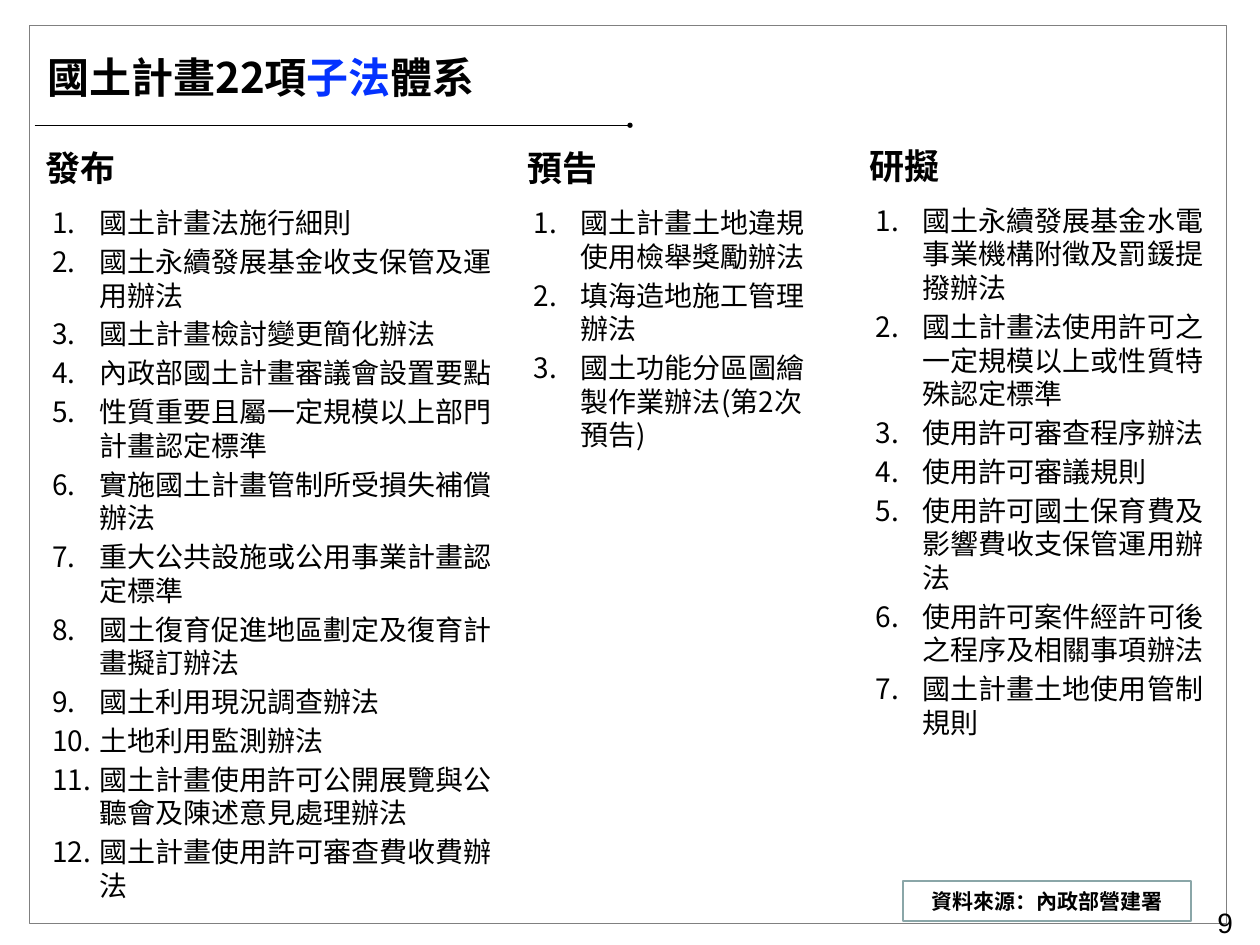
import pptx
import pptx.util
import pptx.dml.color
import pptx.enum.shapes
import pptx.enum.text
import pptx.oxml.ns
from lxml import etree

Cm = pptx.util.Cm
Pt = pptx.util.Pt
ALIGN = pptx.enum.text.PP_ALIGN
ANCHOR = pptx.enum.text.MSO_ANCHOR
CJK_FONT = "Noto Sans CJK SC"
BLACK, BLUE, GRAY, TEAL = "000000", "0432FF", "808080", "8AA6A8"

# Heading, box of the column (left, top, width, height), listed regulations
COLUMNS = [
    ("發布", (1.6, 5.79, 18.8, 31.11), [
        "國土計畫法施行細則",
        "國土永續發展基金收支保管及運用辦法",
        "國土計畫檢討變更簡化辦法",
        "內政部國土計畫審議會設置要點",
        "性質重要且屬一定規模以上部門計畫認定標準",
        "實施國土計畫管制所受損失補償辦法",
        "重大公共設施或公用事業計畫認定標準",
        "國土復育促進地區劃定及復育計畫擬訂辦法",
        "國土利用現況調查辦法",
        "土地利用監測辦法",
        "國土計畫使用許可公開展覽與公聽會及陳述意見處理辦法",
        "國土計畫使用許可審查費收費辦法",
    ]),
    ("預告", (21.01, 5.79, 12.8, 14.33), [
        "國土計畫土地違規使用檢舉獎勵辦法",
        "填海造地施工管理辦法",
        "國土功能分區圖繪製作業辦法(第2次預告)",
    ]),
    ("研擬", (34.8, 5.7, 15.04, 24.52), [
        "國土永續發展基金水電事業機構附徵及罰鍰提撥辦法",
        "國土計畫法使用許可之一定規模以上或性質特殊認定標準",
        "使用許可審查程序辦法",
        "使用許可審議規則",
        "使用許可國土保育費及影響費收支保管運用辦法",
        "使用許可案件經許可後之程序及相關事項辦法",
        "國土計畫土地使用管制規則",
    ]),
]


def color(hex_string):
    return pptx.dml.color.RGBColor.from_string(hex_string)


def place(shape, box):
    shape.left, shape.top, shape.width, shape.height = map(Cm, box)


def set_frame(shape, side=0.51, top=0.25, anchor=ANCHOR.TOP):
    frame = shape.text_frame
    frame.word_wrap = True
    frame.auto_size = pptx.enum.text.MSO_AUTO_SIZE.NONE
    frame.vertical_anchor = anchor
    frame.margin_left = frame.margin_right = Cm(side)
    frame.margin_top = frame.margin_bottom = Cm(top)
    return frame


def format_paragraph(para, size, bold=False, font=CJK_FONT, align=ALIGN.LEFT):
    para.alignment = align
    para.space_before = Pt(0)
    para.line_spacing = Pt(size * 1.2)
    para.font.size = Pt(size)
    para.font.bold = bold
    para.font.name = font
    para.font.color.rgb = color(BLACK)
    # East Asian typeface, on the runs that hold the characters
    for span in para.runs:
        properties = span.font._element
        east_asian = etree.SubElement(properties, pptx.oxml.ns.qn("a:ea"))
        east_asian.set("typeface", CJK_FONT)
        span.font.name = font


def number_paragraph(para, indent):
    properties = para._p.get_or_add_pPr()
    properties.set("marL", str(Cm(indent)))
    properties.set("indent", str(-Cm(indent)))
    bullet = etree.SubElement(properties, pptx.oxml.ns.qn("a:buAutoNum"))
    bullet.set("type", "arabicPeriod")
    # Bullets come before the default run properties
    defaults = properties.find(pptx.oxml.ns.qn("a:defRPr"))
    if defaults is not None:
        defaults.addprevious(bullet)


def add_outline(slide, box, line_color, line_width):
    shape = slide.shapes.add_shape(pptx.enum.shapes.MSO_SHAPE.RECTANGLE, *map(Cm, box))
    shape.shadow.inherit = False
    shape.fill.background()
    shape.line.color.rgb = color(line_color)
    shape.line.width = Pt(line_width)
    return shape


def add_title(slide, box):
    left, top, width, height = box
    title = slide.shapes.title
    place(title, box)
    para = set_frame(title).paragraphs[0]
    for text, hex_string in (("國土計畫22項", BLACK), ("子法", BLUE), ("體系", BLACK)):
        span = para.add_run()
        span.text = text
        span.font.color.rgb = color(hex_string)
    format_paragraph(para, 48, bold=True)

    # Rule under the title, ending in a dot
    rule_top = Cm(top + height + 0.65)
    rule = slide.shapes.add_connector(
        pptx.enum.shapes.MSO_CONNECTOR.STRAIGHT,
        Cm(left), rule_top, Cm(left + 24), rule_top)
    rule.line.color.rgb = color(BLACK)
    rule.line.width = Pt(0.75)
    tail = etree.SubElement(rule.line._get_or_add_ln(), pptx.oxml.ns.qn("a:tailEnd"))
    tail.set("type", "oval")
    etree.SubElement(rule._element.spPr, pptx.oxml.ns.qn("a:effectLst"))


def add_column(slide, body, heading, box, items):
    left, top, width, height = box
    heading_box = slide.shapes.add_textbox(Cm(left), Cm(top), Cm(3.91), Cm(1.96))
    para = set_frame(heading_box, side=0.25, top=0.13).paragraphs[0]
    para.text = heading
    format_paragraph(para, 40, bold=True, font="Arial")

    # Numbered list below the heading
    list_offset = 2.25
    place(body, (left, top + list_offset, width, height - list_offset))
    frame = set_frame(body)
    frame.text = "\n".join(items)
    for para in frame.paragraphs:
        format_paragraph(para, 32)
        para.space_after = Pt(6)
        number_paragraph(para, 1.9)


def add_source(slide, box):
    shape = add_outline(slide, box, TEAL, 2)
    para = set_frame(shape, anchor=ANCHOR.MIDDLE).paragraphs[0]
    para.text = "資料來源：內政部營建署"
    format_paragraph(para, 24, bold=True, align=ALIGN.CENTER)


def add_page_number(slide, box):
    number_box = slide.shapes.add_textbox(*map(Cm, box))
    para = set_frame(number_box).paragraphs[0]
    para.text = "9"
    format_paragraph(para, 32, font="Arial", align=ALIGN.RIGHT)


def main():
    deck = pptx.Presentation()
    deck.slide_width, deck.slide_height = Cm(50.8), Cm(38.1)
    slide = deck.slides.add_slide(deck.slide_layouts.get_by_name("Comparison"))
    bodies = list(slide.placeholders)[1:]

    # Page frame, title and columns
    add_outline(slide, (1.17, 1.04, 48.26, 36.17), GRAY, 0.75)
    add_title(slide, (1.4, 1.83, 25.22, 2.57))
    for body, (heading, box, items) in zip(bodies, COLUMNS):
        add_column(slide, body, heading, box, items)
    for spare in bodies[len(COLUMNS):]:
        spare._element.getparent().remove(spare._element)

    # Source note and page number
    add_source(slide, (36.4, 35.53, 11.61, 1.6))
    add_page_number(slide, (35.41, 36.25, 14.81, 1.85))
    deck.save("out.pptx")


if __name__ == "__main__":
    main()
